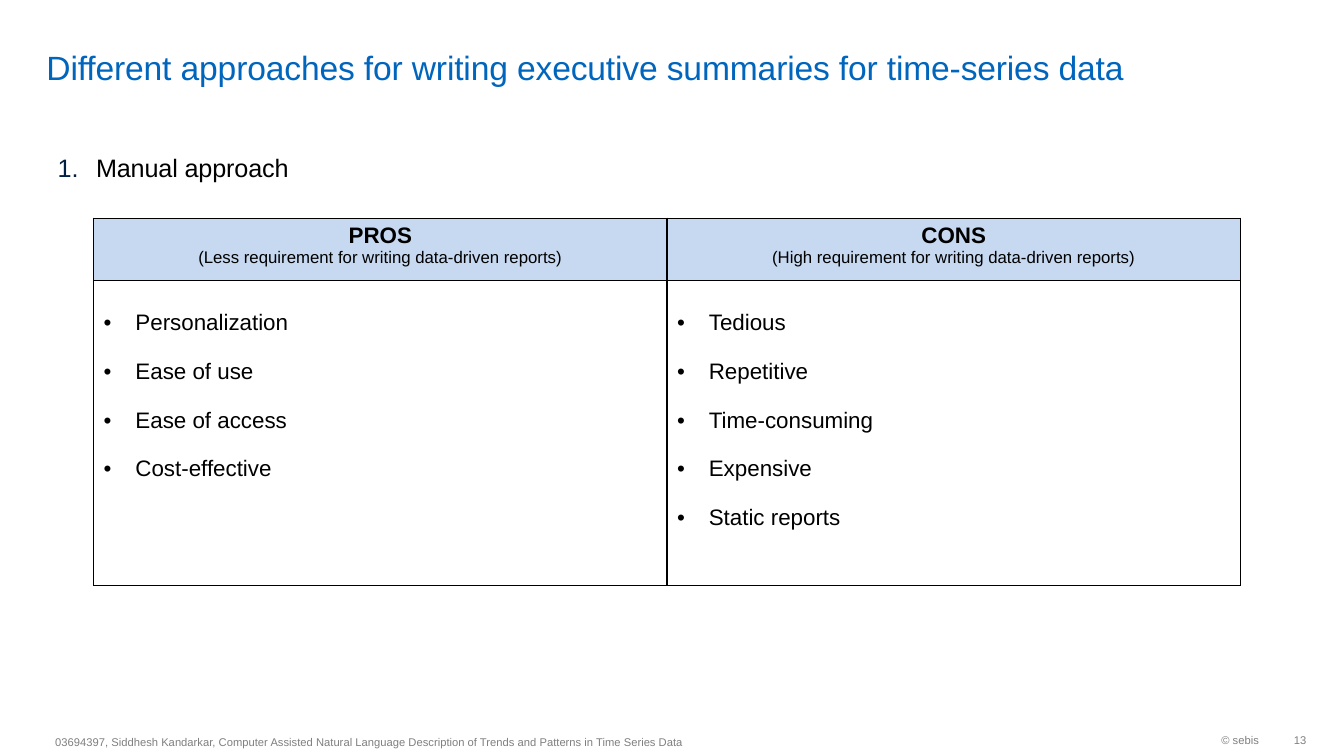
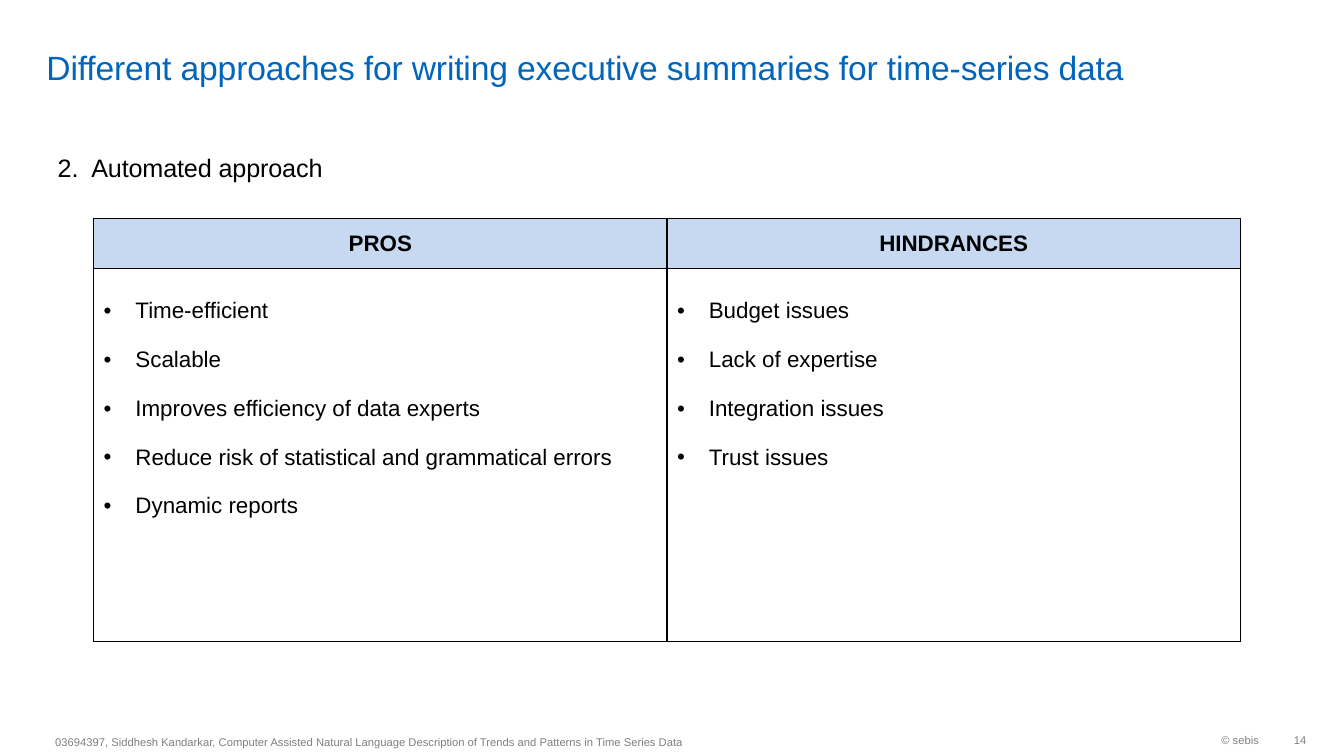
from pptx import Presentation
from pptx.dml.color import RGBColor as RGB
from pptx.enum.text import MSO_ANCHOR as Anchor, MSO_AUTO_SIZE as Fit, PP_ALIGN as Align
from pptx.oxml import parse_xml
from pptx.oxml.ns import nsdecls
from pptx.util import Cm, Pt

# Content
TITLE = "Different approaches for writing executive summaries for time-series data"
THESIS = ("03694397, Siddhesh Kandarkar, Computer Assisted Natural Language "
          "Description of Trends and Patterns in Time Series Data")
OWNER = "© sebis"
FIRST = 13

BLUE = RGB(0x00, 0x65, 0xBD)
NAVY = RGB(0x00, 0x21, 0x43)
BLACK = RGB(0x00, 0x00, 0x00)
WHITE = RGB(0xFF, 0xFF, 0xFF)
GREY = RGB(0x7F, 0x7F, 0x7F)
PALE = RGB(0xC6, 0xD9, 0xF1)

SLIDES = [
    {
        "topic": "Manual approach", "mark": NAVY, "hang": 0.97,
        "rows": (1.57, 7.69), "anchor": Anchor.TOP,
        "cols": [
            (["PROS", "(Less requirement for writing data-driven reports)"],
             ["Personalization", "Ease of use", "Ease of access", "Cost-effective"]),
            (["CONS", "(High requirement for writing data-driven reports)"],
             ["Tedious", "Repetitive", "Time-consuming", "Expensive", "Static reports"]),
        ],
    },
    {
        "topic": "Automated approach", "mark": BLACK, "hang": 0.85,
        "rows": (1.27, 9.4), "anchor": Anchor.MIDDLE,
        "cols": [
            (["PROS"],
             ["Time-efficient", "Scalable", "Improves efficiency of data experts",
              "Reduce risk of statistical and grammatical errors", "Dynamic reports"]),
            (["HINDRANCES"],
             ["Budget issues", "Lack of expertise", "Integration issues", "Trust issues"]),
        ],
    },
]

# Text formats
HEAD = {"size": Pt(24), "color": BLUE, "tight": True}
TOPIC = {"size": Pt(18), "color": BLACK, "tight": True}
NOTE = {"size": Pt(8), "color": GREY}
LABEL = {"size": Pt(16), "color": BLACK, "bold": True}
SUB = {"size": Pt(12), "color": BLACK, "bold": False}
ITEM = {"size": Pt(16), "color": BLACK, "bold": False}

# Shared places in cm: left, top, width, height
TITLE_AT = (1.17, 1.17, 28.9, 1.07)
TOPIC_AT = (1.45, 3.85, 27.08, 0.9)
TABLE_AT = (2.36, 5.5)
COL = 14.45
NOTES = [(1.39, 18.52, 28), (30.78, 18.49, 1.3), (32.61, 18.49, 0.8)]


def write(para, text, fmt):
    run = para.add_run()
    run.text = text
    run.font.name = "Arial"
    for key, val in fmt.items():
        if key == "color":
            run.font.color.rgb = val
        elif key == "tight":
            run._r.get_or_add_rPr().set("spc", "-10")
        else:
            setattr(run.font, key, val)


def mark(para, hang, tag, color=BLACK):
    """Hang a bullet or number in front of a paragraph."""
    props = para._p.get_or_add_pPr()
    props.set("marL", str(Cm(hang)))
    props.set("indent", str(-Cm(hang)))
    for xml in (f'<a:buClr {nsdecls("a")}><a:srgbClr val="{color}"/></a:buClr>',
                f'<a:buFont {nsdecls("a")} typeface="Arial"/>',
                f'<a:{tag} {nsdecls("a")}/>'.replace("/>", "/>")):
        props.append(parse_xml(xml))


def place(shape, box):
    for name, val in zip(("left", "top", "width", "height"), box):
        setattr(shape, name, Cm(val))


def frame(shape, wrap=True):
    body = shape.text_frame
    fmt = {"margin_left": 0, "margin_top": 0, "margin_right": 0, "margin_bottom": 0,
           "word_wrap": wrap, "auto_size": Fit.NONE, "vertical_anchor": Anchor.TOP}
    for key, val in fmt.items():
        setattr(body, key, val)
    para = body.paragraphs[0]
    para.alignment = Align.LEFT
    para.space_before = Pt(0)
    return para


def border(cell):
    props = cell._tc.get_or_add_tcPr()
    for side in "LRTB":
        props.append(parse_xml(
            f'<a:ln{side} {nsdecls("a")} w="12700"><a:solidFill>'
            f'<a:srgbClr val="{BLACK}"/></a:solidFill></a:ln{side}>'))


def paint(cell, color):
    border(cell)
    cell.fill.solid()
    cell.fill.fore_color.rgb = color


def paras(cell, lines):
    body = cell.text_frame
    for num, line in enumerate(lines):
        yield (body.add_paragraph() if num else body.paragraphs[0]), num, line


def grid(slide, data):
    cols, rows = data["cols"], data["rows"]
    left, top = TABLE_AT
    table = slide.shapes.add_table(
        2, len(cols), Cm(left), Cm(top), Cm(COL * len(cols)), Cm(sum(rows))).table
    table.first_row = table.horz_banding = False
    for row, high in zip(table.rows, rows):
        row.height = Cm(high)
    for num, (heads, items) in enumerate(cols):
        table.columns[num].width = Cm(COL)
        # Header cell
        cell = table.cell(0, num)
        paint(cell, PALE)
        cell.vertical_anchor = data["anchor"]
        for para, pos, line in paras(cell, heads):
            para.alignment = Align.CENTER
            write(para, line, SUB if pos else LABEL)
        # List cell
        cell = table.cell(1, num)
        paint(cell, WHITE)
        cell.margin_top = Cm(0.75)
        for para, pos, line in paras(cell, items):
            mark(para, 0.8, 'buChar char="•"')
            para.space_before = Pt(17.1 if pos else 0)
            write(para, line, ITEM)


def build(deck, num, data):
    slide = deck.slides.add_slide(deck.slide_layouts[1])
    # Title and topic
    title, topic = slide.shapes.title, slide.placeholders[1]
    place(title, TITLE_AT)
    write(frame(title), TITLE, HEAD)
    place(topic, TOPIC_AT)
    para = frame(topic)
    mark(para, data["hang"], f'buAutoNum type="arabicPeriod" startAt="{num + 1}"',
         data["mark"])
    write(para, data["topic"], TOPIC)
    grid(slide, data)
    # Footer
    for (left, top, wide), text in zip(NOTES, (THESIS, OWNER, str(FIRST + num))):
        box = slide.shapes.add_textbox(Cm(left), Cm(top), Cm(wide), Cm(0.38))
        write(frame(box, False), text, NOTE)


def main():
    deck = Presentation()
    deck.slide_width, deck.slide_height = Cm(33.87), Cm(19.05)
    for num, data in enumerate(SLIDES):
        build(deck, num, data)
    deck.save("out.pptx")


if __name__ == "__main__":
    main()
